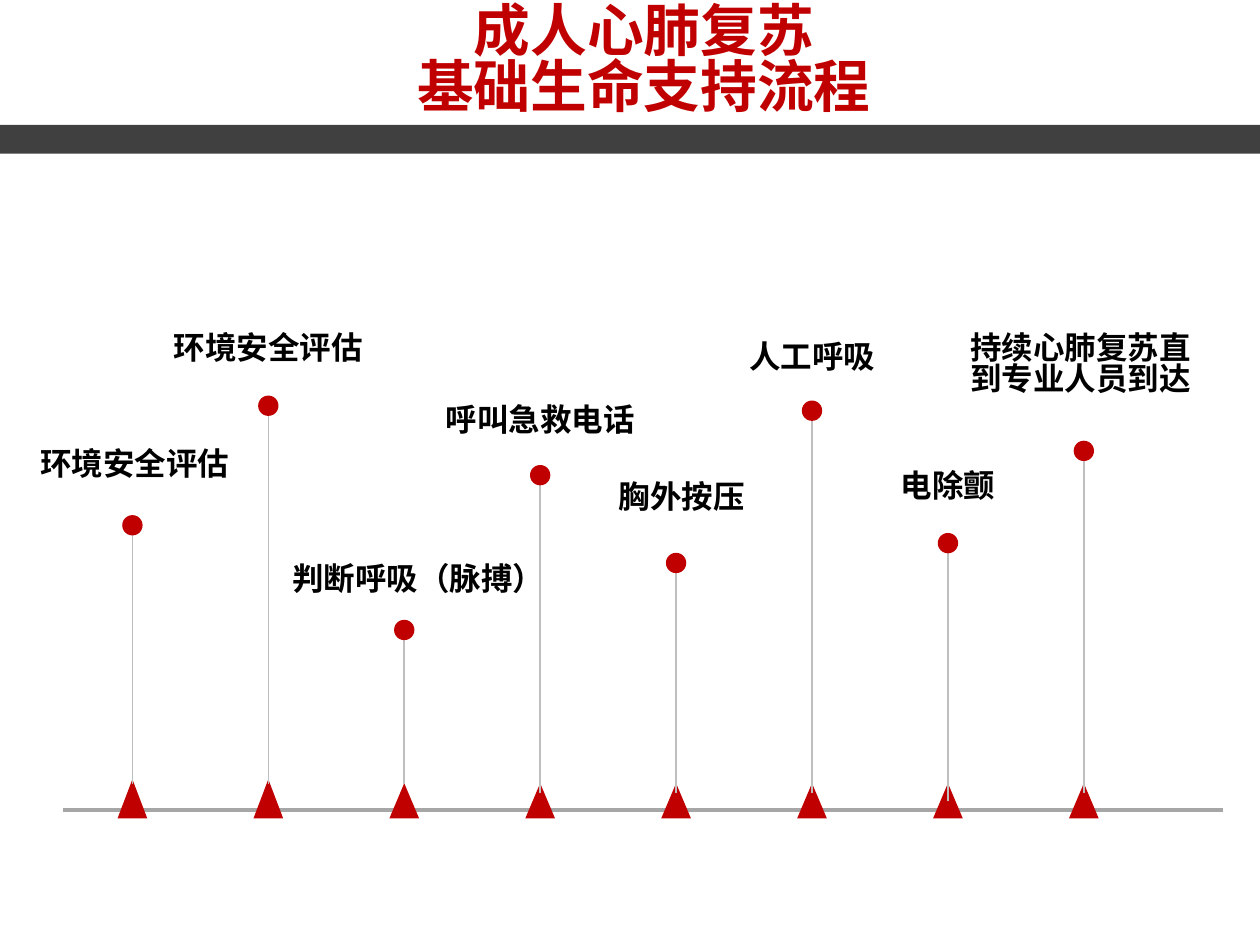
from collections import namedtuple

from lxml import etree
from pptx import Presentation
from pptx.dml.color import RGBColor
from pptx.enum import shapes, text
from pptx.oxml.ns import qn
from pptx.util import Cm, Pt

RED = RGBColor(0xC0, 0x00, 0x00)
BLACK = RGBColor(0x00, 0x00, 0x00)
DARK = RGBColor(0x40, 0x40, 0x40)
AXIS_GREY = RGBColor(0xA6, 0xA6, 0xA6)
STEM_GREY = RGBColor(0xBF, 0xBF, 0xBF)
FONT = "Noto Sans CJK SC"
LABEL_SIZE = 18
CHAR_WIDTH = 0.635
INSET = 0.25

Box = namedtuple("Box", "left top width height")
Step = namedtuple("Step", "label label_top label_shift dot foot marker_height wrap_width")

STEPS = [
    Step("环境安全评估", 2.34, 0.05, 3.96, 9.17, 0.79, None),
    Step("环境安全评估", 0, 0, 1.55, 9.17, 0.79, None),
    Step("判断呼吸（脉搏）", 4.65, 0.28, 6.07, 9.17, 0.71, None),
    Step("呼叫急救电话", 1.45, 0, 2.95, 9.35, 0.71, None),
    Step("胸外按压", 3, 0.11, 4.72, 9.35, 0.71, None),
    Step("人工呼吸", 0.18, 0, 1.65, 9.35, 0.71, None),
    Step("电除颤", 2.77, 0, 4.32, 9.52, 0.71, None),
    Step("持续心肺复苏直到专业人员到达", 0, -0.05, 2.46, 9.35, 0.71, 4.98),
]


def write(frame, content, size, color, align=text.PP_ALIGN.LEFT,
          anchor=text.MSO_ANCHOR.TOP, wrap=True, spacing=0.82):
    frame.word_wrap = wrap
    frame.vertical_anchor = anchor
    frame.text = content
    paragraph = frame.paragraphs[0]
    paragraph.alignment = align
    paragraph.line_spacing = spacing
    for run in paragraph.runs:
        run.font.name = FONT
        run.font.size = Pt(size)
        run.font.bold = True
        run.font.color.rgb = color
        east_asian = etree.SubElement(run._r.get_or_add_rPr(), qn("a:ea"))
        east_asian.set("typeface", FONT)


def add_solid(slide, kind, box, color):
    solid = slide.shapes.add_shape(kind, *map(Cm, box))
    solid.shadow.inherit = False
    solid.fill.solid()
    solid.fill.fore_color.rgb = color
    solid.line.fill.background()


def add_line(slide, start, end, color, width):
    line = slide.shapes.add_connector(
        shapes.MSO_CONNECTOR.STRAIGHT, *map(Cm, start + end))
    line.line.color.rgb = color
    line.line.width = Pt(width)
    etree.SubElement(line._element.spPr, qn("a:effectLst"))


def add_header(slide, box):
    heading = slide.shapes.title
    heading.left, heading.top = Cm(box.left + 1.55), Cm(box.top - 0.33)
    heading.width, heading.height = Cm(22.86), Cm(3.18)
    write(heading.text_frame, "成人心肺复苏\v基础生命支持流程", 32.4, RED,
          align=text.PP_ALIGN.CENTER, anchor=text.MSO_ANCHOR.MIDDLE)
    heading.text_frame.auto_size = text.MSO_AUTO_SIZE.NONE
    bar_height = 0.58
    add_solid(slide, shapes.MSO_SHAPE.RECTANGLE,
              Box(box.left, box.top + box.height - bar_height, box.width, bar_height), DARK)


def add_step(slide, step, x, top, base):
    marker_width, dot_size = 0.6, 0.41
    add_solid(slide, shapes.MSO_SHAPE.ISOSCELES_TRIANGLE,
              Box(x - marker_width / 2, base - step.marker_height,
                  marker_width, step.marker_height), RED)
    dot_y = top + step.dot
    add_line(slide, (x, top + step.foot), (x, dot_y), STEM_GREY, 1)
    add_solid(slide, shapes.MSO_SHAPE.OVAL,
              Box(x - dot_size / 2, dot_y - dot_size / 2, dot_size, dot_size), RED)
    width = step.wrap_width or len(step.label) * CHAR_WIDTH + 2 * INSET
    height = 1.8 if step.wrap_width else 1.02
    label = slide.shapes.add_textbox(
        Cm(x + step.label_shift - width / 2), Cm(top + step.label_top), Cm(width), Cm(height))
    write(label.text_frame, step.label, LABEL_SIZE, BLACK, wrap=bool(step.wrap_width))


def add_timeline(slide, box):
    axis_y = box.top + box.height - 0.17
    add_line(slide, (box.left, axis_y), (box.left + box.width, axis_y), AXIS_GREY, 2)
    first, pitch = 1.4, 2.74
    for index, step in enumerate(STEPS):
        add_step(slide, step, box.left + first + index * pitch, box.top, box.top + box.height)


def main():
    deck = Presentation()
    deck.slide_width, deck.slide_height = Cm(25.4), Cm(19.05)
    slide = deck.slides.add_slide(deck.slide_layouts[5])
    add_header(slide, Box(0, 0, 25.4, 3.1))
    add_timeline(slide, Box(1.27, 6.63, 23.39, 9.87))
    deck.save("out.pptx")


if __name__ == "__main__":
    main()
